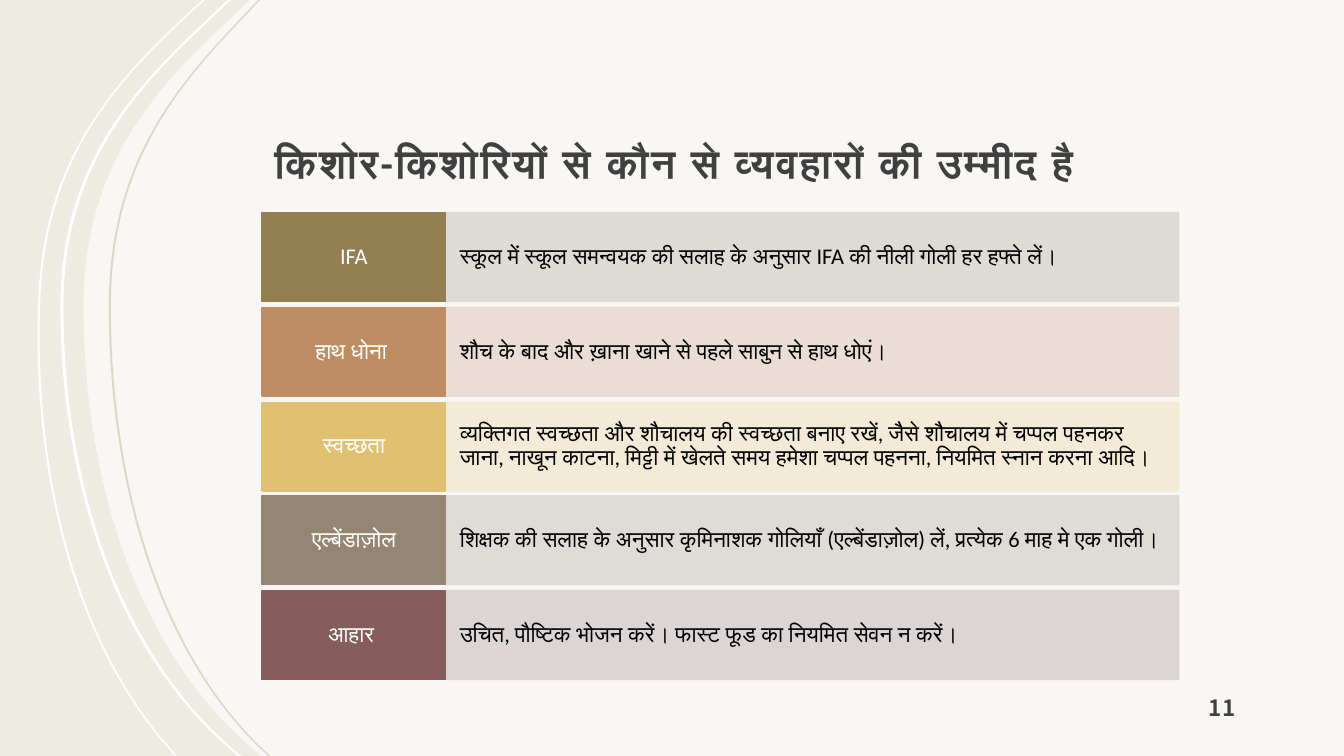
from lxml import etree
from pptx import Presentation
from pptx import util as u
from pptx.dml.color import RGBColor
from pptx.enum import shapes, text
from pptx.oxml.ns import qn

PX = 9144
WIDE, HIGH = 1333, 750
LEFT, TOP, SPAN, ROW = 260, 211, 375, 88
TAG, BODY = 182, 727
HUES = {"back": "EEEBE2", "white": "FFFFFF", "olive": "DDD7C5",
        "dark": "404040", "black": "000000"}
EDGES = {
    "panel": [(248, 0), (211, 35), (139, 104, 83, 179, 83, 304),
              (83, 492, 145, 657, 257, 748), (259, 750)],
    "outer": [(201, 0), (175, 24), (102, 93, 43, 168, 38, 297),
              (31, 480, 78, 645, 171, 747), (173, 750)],
    "middle": [(226, 0), (189, 35), (117, 104, 60, 179, 60, 304),
               (60, 492, 123, 657, 234, 748), (237, 750)],
    "inner": [(256, 0), (223, 35), (159, 104, 108, 179, 108, 304),
              (108, 492, 164, 657, 264, 748), (266, 750)],
}
ROWS = [
    ("IFA", "947F53", "DCD8D1",
     "स्कूल में स्कूल समन्वयक की सलाह के अनुसार IFA की नीली गोली हर हफ्ते लें।"),
    ("हाथ धोना ", "BE8D64", "E8DBD3",
     "शौच के बाद और ख़ाना खाने से पहले साबुन से हाथ धोएं।"),
    ("स्वच्छता", "E0C171", "F3E9D5",
     "व्यक्तिगत स्वच्छता और शौचालय की स्वच्छता बनाए रखें, जैसे शौचालय में चप्पल पहनकर "
     "जाना, नाखून काटना, मिट्टी में खेलते समय हमेशा चप्पल पहनना, नियमित स्नान करना आदि।"),
    ("एल्बेंडाज़ोल", "968572", "DDD9D5",
     "शिक्षक की सलाह के अनुसार कृमिनाशक गोलियाँ (एल्बेंडाज़ोल) लें, प्रत्येक 6 माह मे एक गोली।"),
    ("आहार ", "855D5D", "D9D2D2",
     "उचित, पौष्टिक भोजन करें। फास्ट फूड का नियमित सेवन न करें।"),
]


def px(*sizes):
    return [u.Emu(round(size * PX)) for size in sizes]


def assign(item, **values):
    for name, value in values.items():
        setattr(item, name, value)


def paint(fill, hue, alpha=100):
    fill.solid()
    fill.fore_color.rgb = RGBColor.from_string(hue)
    if alpha < 100:
        color = fill._xPr.find(qn("a:solidFill"))[0]
        etree.SubElement(color, qn("a:alpha"), val=str(alpha * 1000))


def write(shape, words, hue, pads, font, para, anchor):
    frame = shape.text_frame
    left, top, right, bottom = px(*pads)
    assign(frame, word_wrap=True, auto_size=text.MSO_AUTO_SIZE.NONE,
           vertical_anchor=anchor, margin_left=left, margin_top=top,
           margin_right=right, margin_bottom=bottom)
    line = frame.paragraphs[0]
    assign(line, **para)
    run = line.add_run()
    run.text = words
    assign(run.font, **font)
    run.font.color.rgb = RGBColor.from_string(hue)
    return run


def bend(line, step, shape):
    line.tag = qn("a:cubicBezTo")
    line.clear()
    for x, y in zip(step[::2], step[1::2]):
        etree.SubElement(line, qn("a:pt"), x=str(px(x)[0] - shape.left),
                         y=str(px(y)[0] - shape.top))


def sweep(slide, steps, hue, alpha=100):
    ends = [px(*step[-2:]) for step in steps]
    pen = slide.shapes.build_freeform(*ends[0], scale=1.0)
    pen.add_line_segments(ends[1:], close=True)
    shape = pen.convert_to_shape()
    lines = list(shape._element.iter(qn("a:lnTo")))
    for line, step in zip(lines, steps[1:]):
        if len(step) == 6:
            curve = etree.Element(qn("a:cubicBezTo"))
            line.getparent().replace(line, curve)
            bend(curve, step, shape)
    shape.shadow.inherit = False
    shape.line.fill.background()
    paint(shape.fill, hue, alpha)


def flip(edge, width):
    steps = [edge[-1][-2:]]
    for last, step in zip(edge[-2::-1], edge[:0:-1]):
        steps.append(step[2:4] + step[:2] + last[-2:] if len(step) == 6
                     else last[-2:])
    return [tuple(v if n % 2 else v + width for n, v in enumerate(step))
            for step in steps]


def cell(slide, box, words, hue, ink, pads, align, alpha=100):
    shape = slide.shapes.add_shape(shapes.MSO_SHAPE.RECTANGLE, *px(*box))
    shape.shadow.inherit = False
    paint(shape.fill, hue, alpha)
    paint(shape.line.fill, hue, alpha)
    shape.line.width = u.Pt(1)
    write(shape, words, ink, pads, {"name": "Calibri", "size": u.Pt(16)},
          {"alignment": align, "line_spacing": 0.9}, text.MSO_ANCHOR.MIDDLE)


def heading(slide, words):
    title = slide.shapes.title
    slide.shapes._spTree.append(title._element)
    left, top, width, height = px(LEFT, 48, 918, 147)
    assign(title, left=left, top=top, width=width, height=height)
    run = write(title, words, HUES["dark"], (12, 12, 12, 10),
                {"name": "Calibri", "size": u.Pt(28.8), "bold": True},
                {"alignment": text.PP_ALIGN.LEFT, "line_spacing": 1.3},
                text.MSO_ANCHOR.BOTTOM)
    run.font._element.set("spc", "150")


def number(slide, words):
    box = slide.shapes.add_textbox(*px(1187, 675, 130, 50))
    write(box, words, HUES["dark"], (12, 12, 12, 10),
          {"name": "Noto Sans CJK JP", "size": u.Pt(16), "bold": True},
          {}, text.MSO_ANCHOR.BOTTOM)


def main():
    deck = Presentation()
    deck.slide_width, deck.slide_height = px(WIDE, HIGH)
    slide = deck.slides.add_slide(deck.slide_layouts[5])
    paint(slide.background.fill, HUES["back"])
    sweep(slide, EDGES["panel"] + [(WIDE, HIGH), (WIDE, 0)],
          HUES["white"], 60)
    for name, width, hue in (("outer", 2, "white"), ("middle", 3, "white"),
                             ("inner", 2, "olive")):
        edge = EDGES[name]
        sweep(slide, edge + flip(edge, width), HUES[hue])
    heading(slide, "किशोर-किशोरियों से कौन से व्यवहारों की उम्मीद है")
    number(slide, "11")
    for n, (label, deep, pale, words) in enumerate(ROWS):
        top = TOP + (n * SPAN + 2) // 4
        cell(slide, (LEFT + TAG, top, BODY, ROW), words, pale, HUES["black"],
             (14, 22, 14, 22), text.PP_ALIGN.LEFT, 90)
        cell(slide, (LEFT, top, TAG, ROW), label, deep, HUES["white"],
             (10, 9, 10, 9), text.PP_ALIGN.CENTER)
    deck.save("out.pptx")


if __name__ == "__main__":
    main()
